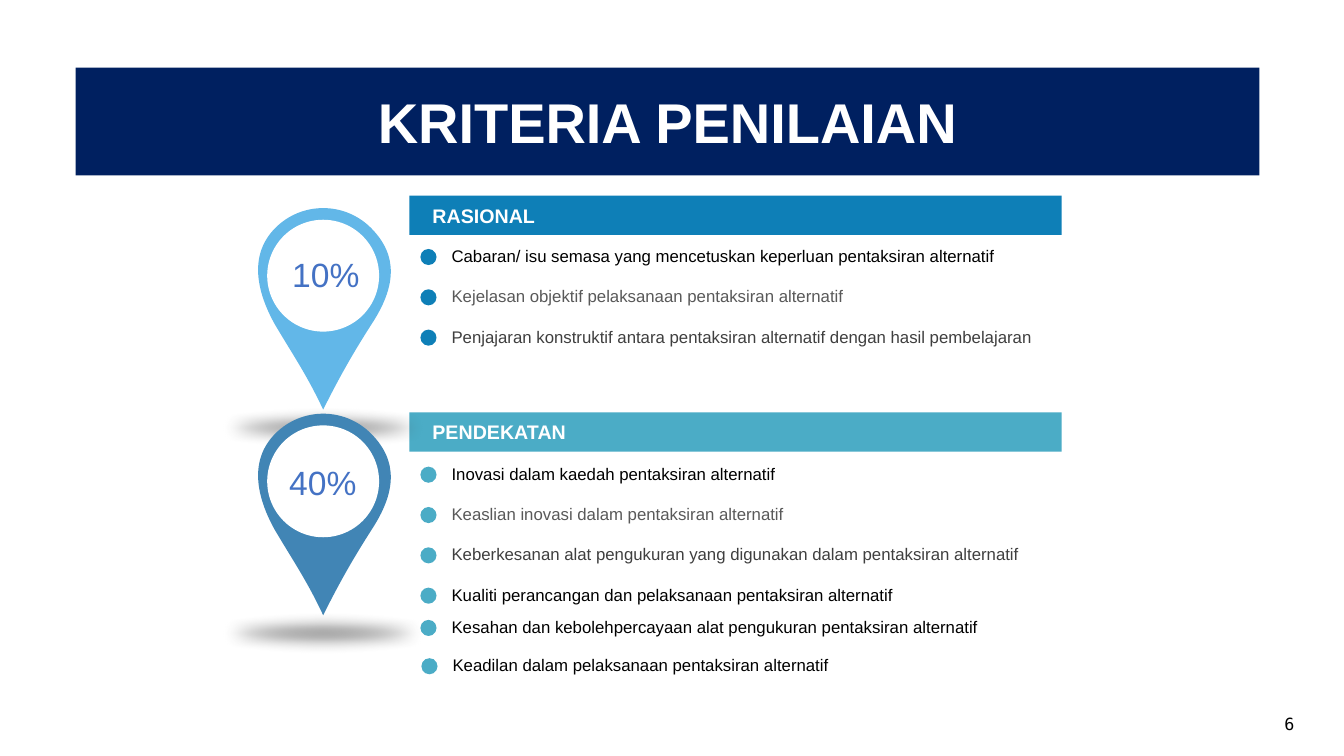
from lxml import etree
from pptx import Presentation
from pptx.dml.color import RGBColor
from pptx.enum import shapes, text
from pptx.oxml import ns
from pptx.util import Inches, Pt

TITLE = "KRITERIA PENILAIAN"
PAGE_NUMBER = "6"
BLACK, GREY, DARK, WHITE = "000000", "595959", "3F3F3F", "FFFFFF"

# Each criterion: wording, text colour, left and top of its text
SECTIONS = [
    {"heading": "RASIONAL", "color": "0E7FB7", "top": 1.94,
     "criteria": [
         ("Cabaran/ isu semasa yang mencetuskan keperluan pentaksiran alternatif", BLACK, 4.38, 2.39),
         ("Kejelasan objektif pelaksanaan pentaksiran alternatif", GREY, 4.38, 2.79),
         ("Penjajaran konstruktif antara pentaksiran alternatif dengan hasil pembelajaran", DARK, 4.38, 3.19),
     ]},
    {"heading": "PENDEKATAN", "color": "4BACC6", "top": 4.09,
     "criteria": [
         ("Inovasi dalam kaedah pentaksiran alternatif", BLACK, 4.38, 4.55),
         ("Keaslian inovasi dalam pentaksiran alternatif", GREY, 4.38, 4.95),
         ("Keberkesanan alat pengukuran yang digunakan dalam pentaksiran alternatif", DARK, 4.38, 5.35),
         ("Kualiti perancangan dan pelaksanaan pentaksiran alternatif", BLACK, 4.38, 5.75),
         ("Kesahan dan kebolehpercayaan alat pengukuran pentaksiran alternatif", BLACK, 4.38, 6.07),
         ("Keadilan dalam pelaksanaan pentaksiran alternatif", BLACK, 4.39, 6.45),
     ]},
]
# Weight, pin colour, top of the pin's frame, left and top of the label
PINS = [
    ("10%", "62B7E8", 2.12, 2.8, 2.47),
    ("40%", "4185B5", 4.16, 2.77, 4.53),
]
PIN_LEFT = 2.4
PIN_ROTATION = 135
# Start of the unrotated pin, then two control points and an end for each curve
PIN_START = (0, 0.94)
PIN_CURVES = [
    ((0, 0.55), (0.24, 0.35), (0.67, 0.26)),
    ((0.99, 0.19), (1.25, 0.12), (1.61, 0)),
    ((1.48, 0.36), (1.44, 0.59), (1.35, 0.94)),
    ((1.25, 1.29), (1.05, 1.61), (0.67, 1.61)),
    ((0.3, 1.61), (0, 1.31), (0, 0.94)),
]

prs = Presentation()
prs.slide_width, prs.slide_height = Inches(13.33), Inches(7.5)
slide = prs.slides.add_slide(prs.slide_layouts[6])


def rgb(color):
    return RGBColor.from_string(color)


def paint(shape, color):
    shape.fill.solid()
    shape.fill.fore_color.rgb = rgb(color)
    shape.line.fill.background()
    shape.shadow.inherit = False
    return shape


def add_filled(parent, kind, box, color):
    return paint(parent.shapes.add_shape(kind, *map(Inches, box)), color)


def write(shape, words, size, color, bold=False, font="Arial",
          align=text.PP_ALIGN.LEFT, anchor=text.MSO_ANCHOR.TOP):
    frame = shape.text_frame
    frame.word_wrap = True
    frame.vertical_anchor = anchor
    paragraph = frame.paragraphs[0]
    paragraph.text = words
    paragraph.alignment = align
    paragraph.font.size, paragraph.font.bold = Pt(size), bold
    paragraph.font.name = font
    paragraph.font.color.rgb = rgb(color)


def add_label(box, words, size, color, **style):
    write(slide.shapes.add_textbox(*map(Inches, box)), words, size, color, **style)


def curve_outline(shape):
    """Turn every three straight segments of a freeform into one Bézier curve."""
    lines = list(shape.element.iter(ns.qn("a:lnTo")))
    for first in range(0, len(lines), 3):
        curve = etree.Element(ns.qn("a:cubicBezTo"))
        lines[first].addprevious(curve)
        for line in lines[first:first + 3]:
            curve.append(line[0])
            line.getparent().remove(line)


def add_pin(group, color, top):
    def place(point):
        return Inches(PIN_LEFT + point[0]), Inches(top + point[1])

    builder = group.shapes.build_freeform(*place(PIN_START), scale=1.0)
    builder.add_line_segments([place(point) for curve in PIN_CURVES for point in curve],
                              close=True)
    pin = paint(builder.convert_to_shape(), color)
    curve_outline(pin)
    pin.rotation = PIN_ROTATION


def add_ground_shadow(group, top):
    """Half-transparent ellipse with soft edges below a pin."""
    ellipse = add_filled(group, shapes.MSO_SHAPE.OVAL, (1.81, top, 2.79, 0.42), "404040")
    properties = ellipse.element.spPr
    fill = properties.find(ns.qn("a:solidFill")).find(ns.qn("a:srgbClr"))
    etree.SubElement(fill, ns.qn("a:alpha"), val="58000")
    effects = properties.find(ns.qn("a:effectLst"))
    etree.SubElement(effects, ns.qn("a:softEdge"), rad="127000")


add_label((12.64, 7.03, 0.61, 0.4), PAGE_NUMBER, 12, BLACK, font="DejaVu Sans Mono")
banner = add_filled(slide, shapes.MSO_SHAPE.RECTANGLE, (0.75, 0.67, 11.74, 1.07), "002060")
write(banner, TITLE, 40, WHITE, bold=True,
      align=text.PP_ALIGN.CENTER, anchor=text.MSO_ANCHOR.MIDDLE)

for section in SECTIONS:
    top = section["top"]
    add_filled(slide, shapes.MSO_SHAPE.RECTANGLE, (4.06, top, 6.47, 0.39), section["color"])
    add_label((4.19, top + 0.04, 3.62, 0.31), section["heading"], 14, WHITE,
              bold=True, anchor=text.MSO_ANCHOR.MIDDLE)
    for criterion, color, left, top in section["criteria"]:
        add_label((left, top, 6.28, 0.3), criterion, 12, color)
        add_filled(slide, shapes.MSO_SHAPE.OVAL, (left - 0.21, top + 0.08, 0.16, 0.16),
                   section["color"])

for weight, color, pin_top, left, top in PINS:
    group = slide.shapes.add_group_shape()
    add_pin(group, color, pin_top)
    add_filled(group, shapes.MSO_SHAPE.OVAL, (2.65, pin_top + 0.06, 1.11, 1.11), WHITE)
    add_ground_shadow(group, pin_top + 1.91)
    add_label((left, top, 0.88, 0.5), weight, 24, "4472C4", anchor=text.MSO_ANCHOR.BOTTOM)

prs.save("out.pptx")
